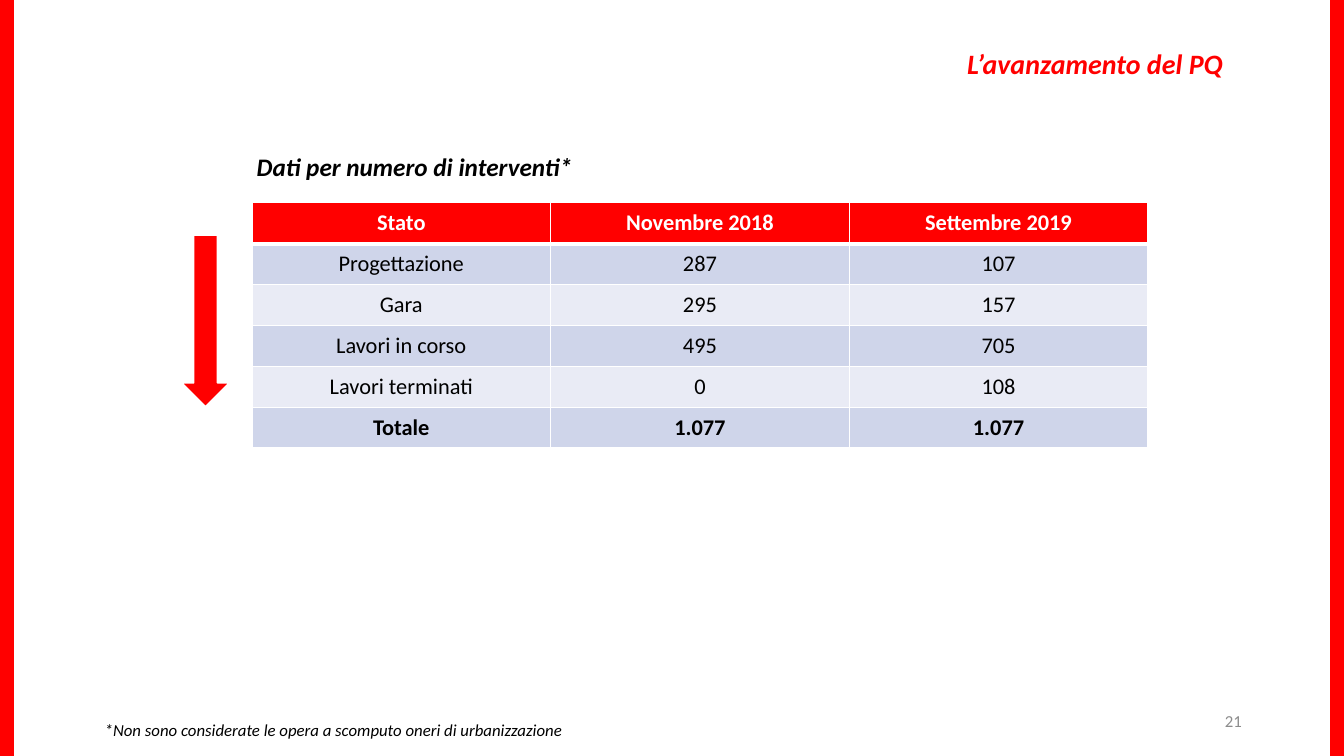
import pptx
import pptx.util
import pptx.dml.color
import pptx.enum.shapes
import pptx.enum.text
import pptx.oxml
import pptx.oxml.ns

Cm = pptx.util.Cm
Pt = pptx.util.Pt
Align = pptx.enum.text.PP_ALIGN
Anchor = pptx.enum.text.MSO_ANCHOR
Shape = pptx.enum.shapes.MSO_SHAPE

RED, WHITE, BLACK, GREY = "FF0000", "FFFFFF", "000000", "8C8C8C"
BANDS = ["CFD5EA", "E9EBF5"]
PAGE_WIDTH, PAGE_HEIGHT, BAR_WIDTH = 33.87, 19.05, 0.33

PROGRESS = [
    ["Stato", "Novembre 2018", "Settembre 2019"],
    ["Progettazione", "287", "107"],
    ["Gara", "295", "157"],
    ["Lavori in corso", "495", "705"],
    ["Lavori terminati", "0", "108"],
    ["Totale", "1.077", "1.077"],
]


def color(value):
    return pptx.dml.color.RGBColor.from_string(value)


def apply(target, values):
    for name, value in values.items():
        setattr(target, name, value)


class SlideBuilder:
    font_name = "Calibri"

    def __init__(self, page):
        self.page = page

    def add_words(self, frame, text, size, ink=BLACK, align=Align.LEFT, after=0, **style):
        para = frame.paragraphs[0]
        apply(para, {"alignment": align, "space_before": Pt(0), "space_after": Pt(after)})
        span = para.add_run()
        span.text = text
        apply(span.font, {"name": self.font_name, "size": Pt(size),
                          "bold": False, "italic": False, **style})
        span.font.color.rgb = color(ink)

    def title(self, text, left, top, width, height):
        box = self.page.shapes.title
        apply(box, {"left": Cm(left), "top": Cm(top), "width": Cm(width), "height": Cm(height)})
        apply(box.text_frame, {"vertical_anchor": Anchor.MIDDLE, "word_wrap": True,
                               "auto_size": pptx.enum.text.MSO_AUTO_SIZE.NONE})
        self.add_words(box.text_frame, text, 20, RED, Align.RIGHT, bold=True, italic=True)

    def text(self, text, left, top, width, height, size, frame_format, **style):
        box = self.page.shapes.add_textbox(Cm(left), Cm(top), Cm(width), Cm(height))
        apply(box.text_frame, {"word_wrap": True, **frame_format})
        self.add_words(box.text_frame, text, size, **style)

    def shape(self, kind, left, top, width, height, line, rotation=0):
        box = self.page.shapes.add_shape(kind, Cm(left), Cm(top), Cm(width), Cm(height))
        box.rotation = rotation
        box.shadow.inherit = False
        box.fill.solid()
        box.fill.fore_color.rgb = color(RED)
        box.line.color.rgb = color(line)
        box.line.width = Pt(1)

    def border(self, cell, sides):
        properties = cell._tc.get_or_add_tcPr()
        for position, (side, width) in enumerate(sides.items()):
            line = pptx.oxml.parse_xml(
                f'<a:{side} {pptx.oxml.ns.nsdecls("a")} w="{Pt(width)}">'
                f'<a:solidFill><a:srgbClr val="{WHITE}"/></a:solidFill></a:{side}>')
            properties.insert(position, line)

    def table(self, rows, left, top, width, row_height):
        count = len(rows)
        columns = len(rows[0])
        table = self.page.shapes.add_table(count, columns, Cm(left), Cm(top), Cm(width),
                                           Cm(row_height * count)).table
        for column in table.columns:
            column.width = Cm(width / columns)
        for row_index, values in enumerate(rows):
            table.rows[row_index].height = Cm(row_height)
            header = row_index == 0
            fill = RED if header else BANDS[(row_index - 1) % 2]
            for column_index, value in enumerate(values):
                cell = table.cell(row_index, column_index)
                cell.vertical_anchor = Anchor.MIDDLE
                cell.fill.solid()
                cell.fill.fore_color.rgb = color(fill)
                self.border(cell, {"lnL": 1, "lnR": 1, "lnT": 3 if row_index == 1 else 1,
                                   "lnB": 3 if header else 1})
                self.add_words(cell.text_frame, value, 16, WHITE if header else BLACK,
                               Align.CENTER, bold=row_index in (0, count - 1))


def main():
    deck = pptx.Presentation()
    apply(deck, {"slide_width": Cm(PAGE_WIDTH), "slide_height": Cm(PAGE_HEIGHT)})
    builder = SlideBuilder(deck.slides.add_slide(deck.slide_layouts[5]))
    no_margins = dict.fromkeys(["margin_left", "margin_top", "margin_right", "margin_bottom"], 0)

    for left in (0, PAGE_WIDTH - BAR_WIDTH):
        builder.shape(Shape.RECTANGLE, left, 0, BAR_WIDTH, PAGE_HEIGHT, RED)
    builder.text("Dati per numero di interventi*", 6.05, 3.81, 8.38, 1.19, 18, no_margins,
                 align=Align.RIGHT, after=10, bold=True, italic=True)
    builder.title("L’avanzamento del PQ", 18.01, 0.97, 13.06, 1.27)
    builder.text("21", 23.93, 17.65, 7.62, 1.02, 12, {"vertical_anchor": Anchor.MIDDLE},
                 ink=GREY, align=Align.RIGHT)
    builder.table(PROGRESS, 6.35, 5.11, 22.58, 1.03)
    builder.shape(Shape.RIGHT_ARROW, 3.02, 7.49, 4.32, 1.19, WHITE, rotation=90)
    builder.text("*Non sono considerate le opera a scomputo oneri di urbanizzazione",
                 2.64, 18.14, 13.92, 0.58, 12, no_margins, after=10, italic=True)
    deck.save("out.pptx")


if __name__ == "__main__":
    main()
